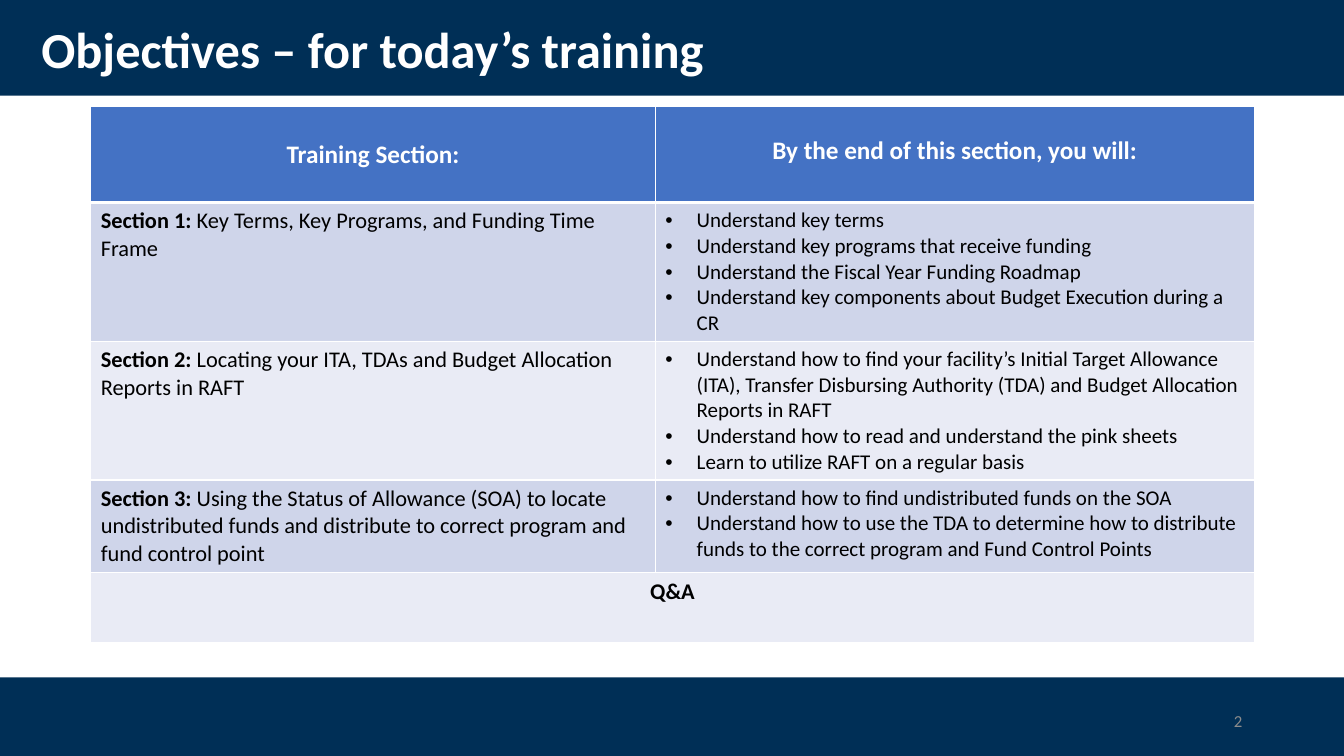
import dataclasses

import lxml.etree
import pptx
import pptx.dml.color
import pptx.enum.shapes
import pptx.enum.text
import pptx.oxml.ns
import pptx.util

Inches = pptx.util.Inches
Pt = pptx.util.Pt
qn = pptx.oxml.ns.qn
Align = pptx.enum.text.PP_ALIGN
Anchor = pptx.enum.text.MSO_ANCHOR


@dataclasses.dataclass(frozen=True)
class Theme:
    font: str = "Calibri"
    navy: str = "002F56"
    header: str = "4472C4"
    bands: tuple = ("CFD5EA", "E9EBF5")
    white: str = "FFFFFF"
    black: str = "000000"
    gray: str = "8C8C8C"
    title_size: int = 36
    header_size: int = 18
    section_size: int = 16
    goal_size: int = 15
    number_size: int = 12


theme = Theme()


def style(paragraph, size, color, bold=None, alignment=Align.LEFT):
    paragraph.alignment = alignment
    paragraph.font.name = theme.font
    paragraph.font.size = Pt(size)
    paragraph.font.bold = bold
    paragraph.font.color.rgb = pptx.dml.color.RGBColor.from_string(color)


def paint_cell(cell, color, top_width, bottom_width):
    properties = cell._tc.get_or_add_tcPr()
    widths = {"lnL": 1, "lnR": 1, "lnT": top_width, "lnB": bottom_width}
    for side, width in widths.items():
        line = lxml.etree.SubElement(properties, qn(f"a:{side}"), w=str(Pt(width)))
        fill = lxml.etree.SubElement(line, qn("a:solidFill"))
        lxml.etree.SubElement(fill, qn("a:srgbClr"), val=theme.white)
    cell.fill.solid()
    cell.fill.fore_color.rgb = pptx.dml.color.RGBColor.from_string(color)


presentation = pptx.Presentation()
presentation.slide_width = Inches(13.33)
presentation.slide_height = Inches(7.5)
slide = presentation.slides.add_slide(presentation.slide_layouts[5])

for top, height in ((0, 0.95), (6.72, 0.8)):
    bar = slide.shapes.add_shape(
        pptx.enum.shapes.MSO_SHAPE.RECTANGLE,
        Inches(0), Inches(top), Inches(13.33), Inches(height))
    bar.shadow.inherit = False
    bar.fill.solid()
    bar.fill.fore_color.rgb = pptx.dml.color.RGBColor.from_string(theme.navy)
    bar.line.fill.background()

title = slide.shapes.title
title.element.getparent().append(title.element)
title.left, title.top = Inches(0.31), Inches(0.18)
title.width, title.height = Inches(11.5), Inches(0.68)
title.text_frame.text = "Objectives – for today’s training"
title.text_frame.vertical_anchor = Anchor.MIDDLE
title.text_frame.paragraphs[0].line_spacing = 0.9
style(title.text_frame.paragraphs[0], theme.title_size, theme.white, True)

sections = [
    ("Section 1: ", "Key Terms, Key Programs, and Funding Time Frame", [
        "Understand key terms",
        "Understand key programs that receive funding",
        "Understand the Fiscal Year Funding Roadmap",
        "Understand key components about Budget Execution during a CR",
    ]),
    ("Section 2: ", "Locating your ITA, TDAs and Budget Allocation Reports in RAFT", [
        "Understand how to find your facility’s Initial Target Allowance (ITA), "
        "Transfer Disbursing Authority (TDA) and Budget Allocation Reports in RAFT",
        "Understand how to read and understand the pink sheets",
        "Learn to utilize RAFT on a regular basis",
    ]),
    ("Section 3: ", "Using the Status of Allowance (SOA) to locate undistributed funds "
     "and distribute to correct program and fund control point", [
        "Understand how to find undistributed funds on the SOA",
        "Understand how to use the TDA to determine how to distribute funds "
        "to the correct program and Fund Control Points",
    ]),
]

column_widths = (5.6, 5.94)
row_heights = (0.95, 1.37, 1.37, 0.92, 0.69)
table = slide.shapes.add_table(
    len(row_heights), len(column_widths), Inches(0.9), Inches(1.06),
    Inches(sum(column_widths)), Inches(sum(row_heights))).table
for column, width in zip(table.columns, column_widths):
    column.width = Inches(width)
for row, height in zip(table.rows, row_heights):
    row.height = Inches(height)

for row_index, row in enumerate(table.rows):
    color = theme.bands[(row_index - 1) % 2] if row_index else theme.header
    for cell in row.cells:
        paint_cell(cell, color, 3 if row_index == 1 else 1, 1 if row_index else 3)

headers = (("Training Section:", 0.32), ("By the end of this section, you will:", 0.28))
for column_index, (text, margin) in enumerate(headers):
    cell = table.cell(0, column_index)
    cell.text = text
    cell.margin_top = Inches(margin)
    style(cell.text_frame.paragraphs[0], theme.header_size, theme.white, True, Align.CENTER)

for row_index, (label, topic, goals) in enumerate(sections, 1):
    paragraph = table.cell(row_index, 0).text_frame.paragraphs[0]
    for text, bold in ((label, True), (topic, False)):
        run = paragraph.add_run()
        run.text = text
        run.font.bold = bold
    style(paragraph, theme.section_size, theme.black)

    goal_cell = table.cell(row_index, 1)
    goal_cell.text = "\n".join(goals)
    for paragraph in goal_cell.text_frame.paragraphs:
        properties = paragraph._p.get_or_add_pPr()
        properties.set("marL", str(Inches(0.31)))
        properties.set("indent", str(Inches(-0.31)))
        lxml.etree.SubElement(properties, qn("a:buFont"), typeface="Arial")
        lxml.etree.SubElement(properties, qn("a:buChar"), char="•")
        style(paragraph, theme.goal_size, theme.black, False)

closing = table.cell(4, 0)
closing.merge(table.cell(4, 1))
closing.text = "Q&A"
style(closing.text_frame.paragraphs[0], theme.section_size, theme.black, True, Align.CENTER)

number = slide.shapes.add_textbox(Inches(9.42), Inches(6.95), Inches(3), Inches(0.4))
number.text_frame.word_wrap = True
number.text_frame.vertical_anchor = Anchor.MIDDLE
number.text_frame.text = "2"
style(number.text_frame.paragraphs[0], theme.number_size, theme.gray, False, Align.RIGHT)

presentation.save("out.pptx")
